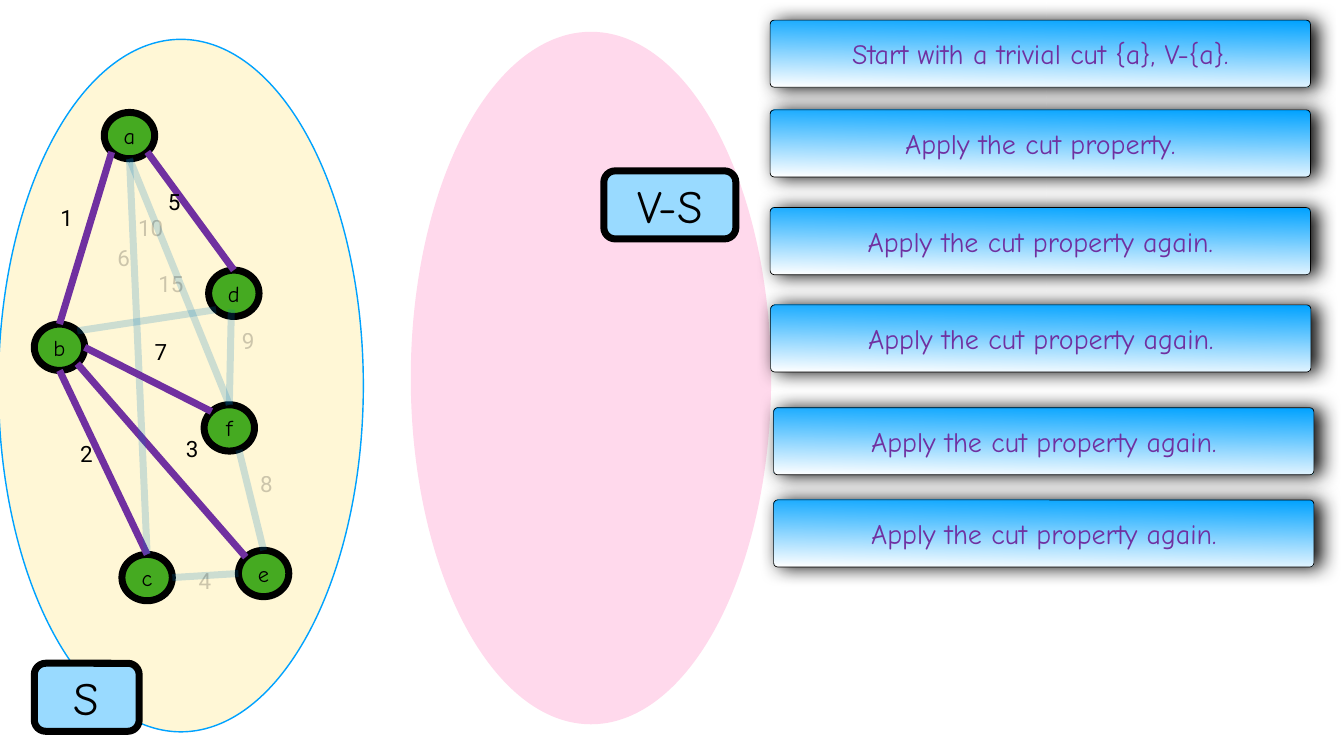
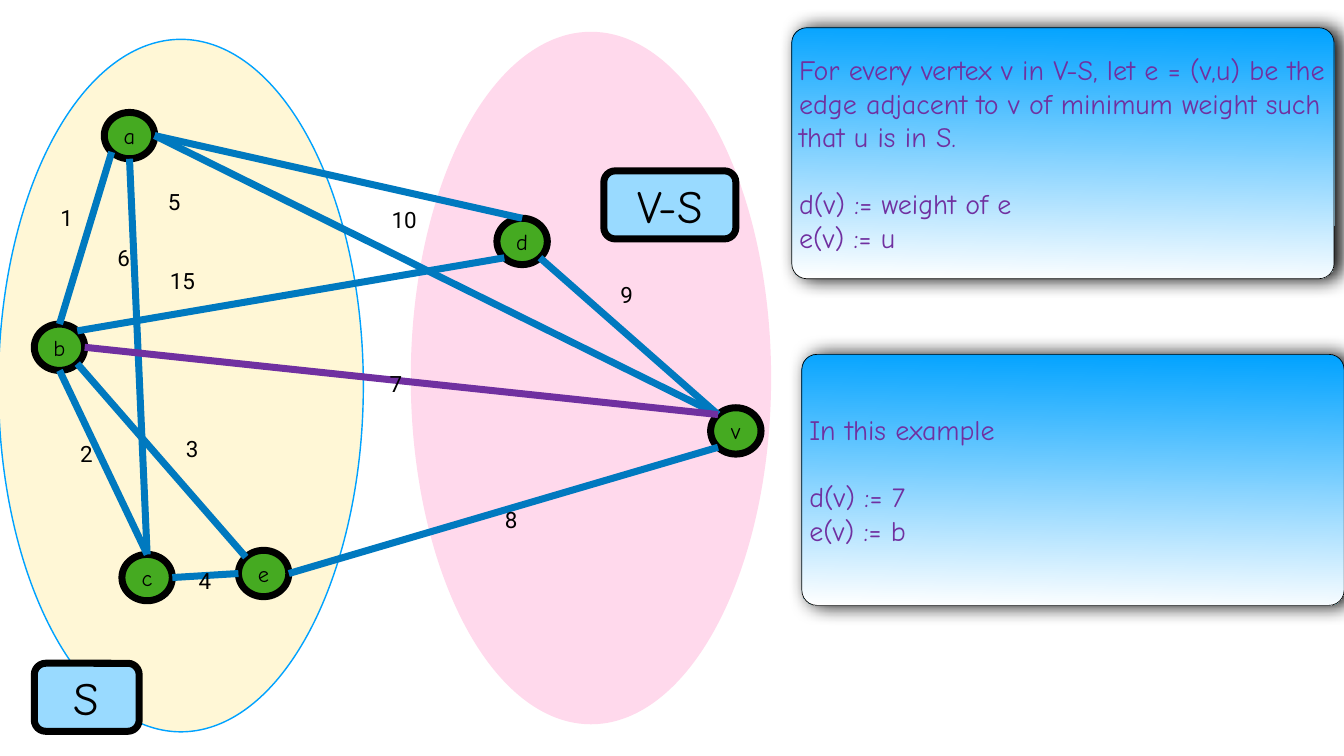
"""Build two slides on growing a spanning tree with the cut property."""
from dataclasses import dataclass
from typing import Any

from lxml.etree import SubElement
from pptx import Presentation
from pptx.dml.color import RGBColor
from pptx.enum.shapes import MSO_CONNECTOR as Connector, MSO_SHAPE as Form
from pptx.enum.text import MSO_ANCHOR as Anchor, MSO_AUTO_SIZE as Fit, PP_ALIGN as Align
from pptx.oxml.ns import qn
from pptx.util import Pt

COLORS = {
    "ink": "000000", "sky": "00A2FF", "white": "FFFFFF", "cream": "FFF7D6", "pink": "FFD9EC",
    "badge": "99DAFF", "vertex": "45AA21", "edge": "0079BF", "purple": "7030A0",
}
FRAME = {
    "word_wrap": True, "vertical_anchor": Anchor.MIDDLE, "margin_left": Pt(4.3),
    "margin_right": Pt(4.3), "margin_top": Pt(4.3), "margin_bottom": Pt(4.3),
}
GROWING = FRAME | {"auto_size": Fit.SHAPE_TO_FIT_TEXT}
CENTERED = {"alignment": Align.CENTER}
LEFT = {"alignment": Align.LEFT}
WEIGHT_PARA = {"line_spacing": 0.9, "space_before": Pt(45)}
BADGE_FONT = {"name": "Comic Neue", "size": Pt(66)}
VERTEX_FONT = {"name": "Comic Neue", "size": Pt(32)}
CARD_FONT = {"name": "Comic Neue", "size": Pt(40)}
WEIGHT_FONT = {"name": "Roboto", "size": Pt(32)}
HEAVY, FAINT, BLANK_LINE = 10, 20, 48
VERTEX_WIDTH, VERTEX_HEIGHT = 72, 66.2
DIAGONAL = 0.707
PORTS = {
    "top": (0, -1), "bottom": (0, 1), "left": (-1, 0), "right": (1, 0),
    "top left": (-DIAGONAL, -DIAGONAL), "top right": (DIAGONAL, -DIAGONAL),
    "bottom left": (-DIAGONAL, DIAGONAL), "bottom right": (DIAGONAL, DIAGONAL),
    "inside": (-0.1, 0.7), "below": (0.38, 0.95),
}


@dataclass(frozen=True)
class Area:
    left: float
    top: float
    width: float
    height: float

    def lengths(self) -> list[Pt]:
        return [Pt(value) for value in (self.left, self.top, self.width, self.height)]


@dataclass(frozen=True)
class Edge:
    weight: int
    start: str
    start_port: str
    end: str
    end_port: str
    label_left: float
    label_top: float


@dataclass(frozen=True)
class Card:
    area: Area
    lines: tuple[str, ...]
    format: dict[str, Any]


@dataclass(frozen=True)
class Graph:
    vertices: dict[str, tuple[float, float]]
    edges: list[Edge]
    chosen: set[int]
    fade_others: bool
    cards: list[Card]


INNER_VERTICES = {"a": (149, 160.6), "b": (49, 463), "c": (174.2, 792), "e": (340.6, 786.2)}
INNER_EDGES = [
    Edge(2, "c", "top", "b", "bottom", 110.2, 605.5),
    Edge(3, "e", "top left", "b", "bottom right", 261.4, 599),
    Edge(1, "b", "top", "a", "bottom left", 82.1, 268.6),
    Edge(6, "c", "top", "a", "bottom", 163.4, 325.4),
    Edge(4, "c", "right", "e", "left", 279.4, 787.7),
]
AGAIN = "Apply the cut property again."
STEPS = [
    (1100.2, 28.8, "Start with a trivial cut {a}, V-{a}."),
    (1100.2, 157, "Apply the cut property."),
    (1100.2, 296.6, AGAIN),
    (1100.9, 435.6, AGAIN),
    (1105.2, 582.5, AGAIN),
    (1105.2, 714.2, AGAIN),
]
GRAPHS = [
    Graph(
        INNER_VERTICES | {"d": (298.1, 385.9), "f": (291.6, 578.2)},
        INNER_EDGES + [
            Edge(9, "d", "inside", "f", "top", 341.3, 444.2),
            Edge(10, "f", "top", "a", "bottom", 193, 283),
            Edge(15, "d", "bottom left", "b", "top right", 221.8, 363.6),
            Edge(8, "f", "below", "e", "top", 367.2, 649.4),
            Edge(5, "d", "top", "a", "bottom right", 235.4, 246.2),
            Edge(7, "f", "top left", "b", "right", 216.7, 460.8),
        ],
        {1, 2, 3, 5, 7}, True,
        [Card(Area(left, top, 771.8, 95.8), (text,), CENTERED) for left, top, text in STEPS],
    ),
    Graph(
        INNER_VERTICES | {"d": (709.9, 311.8), "v": (1015.2, 582.5)},
        INNER_EDGES + [
            Edge(9, "d", "bottom right", "v", "top left", 882, 379.4),
            Edge(10, "v", "top left", "a", "right", 555.1, 271.4),
            Edge(15, "d", "bottom left", "b", "top right", 238.3, 358.6),
            Edge(8, "v", "bottom left", "e", "right", 717.1, 699.8),
            Edge(5, "d", "top", "a", "right", 235.4, 246.2),
            Edge(7, "v", "top left", "b", "right", 552.2, 506.2),
        ],
        {7}, False,
        [
            Card(Area(1131.1, 39.6, 774.7, 358.6), (
                "For every vertex v in V-S, let e = (v,u) be the edge adjacent to v "
                "of minimum weight such that u is in S.",
                "d(v) := weight of e", "e(v) := u"), LEFT),
            Card(Area(1145.5, 506.2, 774.7, 358.6),
                 ("In this example", "d(v) := 7", "e(v) := b"), LEFT),
        ],
    ),
]


def rgb(name: str) -> RGBColor:
    return RGBColor.from_string(COLORS[name])


def apply(target: Any, values: dict[str, Any]) -> None:
    for name, value in values.items():
        setattr(target, name, value)


def add_alpha(color: Any, percent: int) -> None:
    SubElement(color, qn("a:alpha"), val=str(percent * 1000))


def fade(shape: Any) -> None:
    for color in shape.element.iter(qn("a:srgbClr")):
        add_alpha(color, FAINT)


def write(box: Any, lines: tuple[str, ...], frame: dict, layout: dict, font: dict,
          color: str = "ink") -> None:
    apply(box.text_frame, frame)
    for index, line in enumerate(lines):
        para = box.text_frame.add_paragraph() if index else box.text_frame.paragraphs[0]
        apply(para, layout)
        if index == 1:
            para.space_before = Pt(BLANK_LINE)
        span = para.add_run()
        span.text = line
        apply(span.font, font)
        span.font.color.rgb = rgb(color)


def add_form(page: Any, form: Form, area: Area, fill: str | None, line: str | None = "ink",
             weight: float = HEAVY) -> Any:
    shape = page.shapes.add_shape(form, *area.lengths())
    shape.shadow.inherit = False
    if fill:
        shape.fill.solid()
        shape.fill.fore_color.rgb = rgb(fill)
    if line:
        shape.line.color.rgb = rgb(line)
        shape.line.width = Pt(weight)
    else:
        shape.line.fill.background()
    return shape


def add_badge(page: Any, area: Area, text: str) -> None:
    badge = add_form(page, Form.ROUNDED_RECTANGLE, area, "badge")
    write(badge, (text,), GROWING, CENTERED, BADGE_FONT)


def add_card(page: Any, card: Card) -> None:
    shape = add_form(page, Form.ROUNDED_RECTANGLE, card.area, None, "ink", 1)
    shape.adjustments[0] = 0.06
    shape.fill.gradient()
    shape.fill.gradient_angle = 269
    for stop, color, position in zip(shape.fill.gradient_stops, ("sky", "white"), (0, 1)):
        stop.color.rgb = rgb(color)
        stop.position = position
    effects = shape.element.spPr.find(qn("a:effectLst"))
    shadow = SubElement(effects, qn("a:outerShdw"), blurRad=str(Pt(28)), dist=str(Pt(9)),
                        dir="0", rotWithShape="0")
    add_alpha(SubElement(shadow, qn("a:srgbClr"), val=COLORS["ink"]), 97)
    write(shape, card.lines, FRAME, card.format, CARD_FONT, "purple")


def add_vertex(page: Any, name: str, left: float, top: float) -> None:
    vertex = add_form(page, Form.OVAL, Area(left, top, VERTEX_WIDTH, VERTEX_HEIGHT), "vertex")
    write(vertex, (name,), GROWING, CENTERED, VERTEX_FONT)


def port_point(corner: tuple[float, float], port: str) -> tuple[Pt, Pt]:
    across, down = PORTS[port]
    return (Pt(corner[0] + VERTEX_WIDTH / 2 * (1 + across)),
            Pt(corner[1] + VERTEX_HEIGHT / 2 * (1 + down)))


def add_edge(page: Any, edge: Edge, graph: Graph) -> None:
    start = port_point(graph.vertices[edge.start], edge.start_port)
    end = port_point(graph.vertices[edge.end], edge.end_port)
    line = page.shapes.add_connector(Connector.STRAIGHT, *start, *end)
    chosen = edge.weight in graph.chosen
    line.line.color.rgb = rgb("purple" if chosen else "edge")
    line.line.width = Pt(HEAVY)
    SubElement(line.element.spPr, qn("a:effectLst"))
    if graph.fade_others and not chosen:
        fade(line)


def add_weight(page: Any, edge: Edge, graph: Graph) -> None:
    width = 39 if edge.weight < 10 else 50.4
    box = page.shapes.add_textbox(*Area(edge.label_left, edge.label_top, width, 88.6).lengths())
    write(box, (str(edge.weight),), GROWING, WEIGHT_PARA, WEIGHT_FONT)
    if graph.fade_others and edge.weight not in graph.chosen:
        fade(box)


def add_graph(page: Any, graph: Graph) -> None:
    add_form(page, Form.OVAL, Area(-2.2, 56.2, 521.3, 989.3), "cream", "sky", 2)
    add_form(page, Form.OVAL, Area(586.8, 45.4, 514.8, 989.3), "pink", None)
    add_badge(page, Area(49, 947.5, 149.8, 97.2), "S")
    for name, corner in graph.vertices.items():
        add_vertex(page, name, *corner)
    for edge in graph.edges:
        add_edge(page, edge, graph)
    for edge in graph.edges:
        add_weight(page, edge, graph)
    add_badge(page, Area(862.6, 244.1, 188.6, 97.2), "V-S")
    for card in graph.cards:
        add_card(page, card)


def main() -> None:
    deck = Presentation()
    apply(deck, {"slide_width": Pt(1920), "slide_height": Pt(1080)})
    for graph in GRAPHS:
        add_graph(deck.slides.add_slide(deck.slide_layouts[6]), graph)
    deck.save("out.pptx")


if __name__ == "__main__":
    main()
